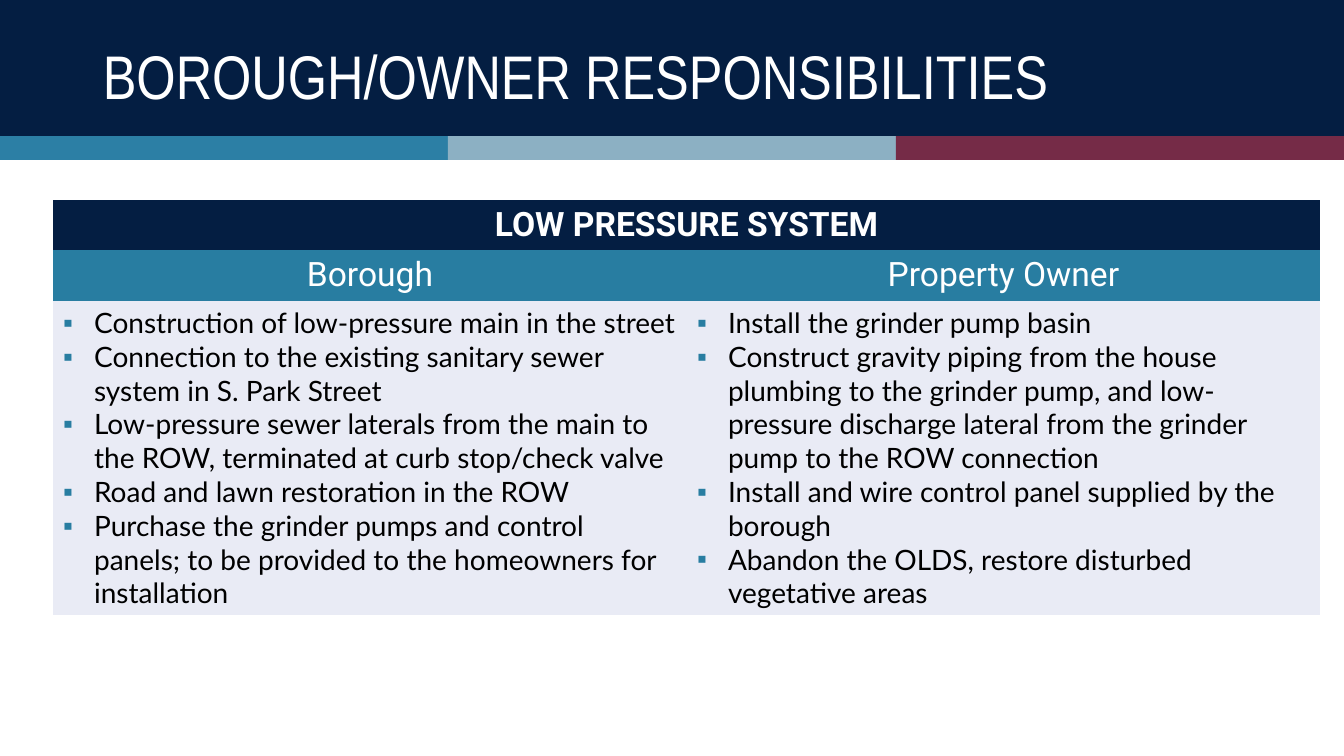
import pptx
import pptx.dml.color
import pptx.enum.shapes
import pptx.enum.text
import pptx.oxml
import pptx.oxml.ns
import pptx.util

NAVY, TEAL, WHITE = "041E42", "287DA1", "FFFFFF"
PANEL, BLACK = "E9EBF5", "000000"
PLAIN_TABLE = "{2D5ABB26-0587-4C30-8999-92F81FD0307C}"
CENTER = pptx.enum.text.PP_ALIGN.CENTER
MIDDLE = pptx.enum.text.MSO_ANCHOR.MIDDLE


def px(length):
    return pptx.util.Emu(round(length * 914400 / 100.8))


def color(hex_value):
    return pptx.dml.color.RGBColor.from_string(hex_value)


class Deck:
    def __init__(self, width, height):
        self.presentation = pptx.Presentation()
        self.presentation.slide_width = px(width)
        self.presentation.slide_height = px(height)
        self.slide = self.presentation.slides.add_slide(self.presentation.slide_layouts[6])

    def band(self, left, top, width, height, fill):
        band = self.slide.shapes.add_shape(
            pptx.enum.shapes.MSO_SHAPE.RECTANGLE, px(left), px(top), px(width), px(height))
        band.shadow.inherit = False
        band.fill.solid()
        band.fill.fore_color.rgb = color(fill)
        band.line.fill.background()

    def style(self, paragraph, font, size, ink, bold=False):
        paragraph.font.name = font
        paragraph.font.size = pptx.util.Pt(size)
        paragraph.font.bold = bold
        paragraph.font.color.rgb = color(ink)

    def title(self, left, top, width, height, text):
        frame = self.slide.shapes.add_textbox(px(left), px(top), px(width), px(height)).text_frame
        frame.word_wrap = True
        frame.vertical_anchor = MIDDLE
        heading = frame.paragraphs[0]
        heading.text = text
        heading.line_spacing = 0.9
        self.style(heading, "Arial Narrow", 44, WHITE)

    def table(self, left, top, columns, rows):
        table = self.slide.shapes.add_table(
            len(rows), len(columns), px(left), px(top), px(sum(columns)), px(sum(rows))).table
        properties = table._tbl.tblPr
        properties.find(pptx.oxml.ns.qn("a:tableStyleId")).text = PLAIN_TABLE
        table.first_row = table.horz_banding = False
        for column, width in zip(table.columns, columns):
            column.width = px(width)
        for row, height in zip(table.rows, rows):
            row.height = px(height)
        return table

    def fill_cell(self, cell, fill):
        cell.fill.solid()
        cell.fill.fore_color.rgb = color(fill)

    def header(self, cell, text, fill, bold=False):
        self.fill_cell(cell, fill)
        label = cell.text_frame.paragraphs[0]
        label.text = text
        label.alignment = CENTER
        self.style(label, "Roboto", 24, WHITE, bold)

    def bullets(self, cell, duties):
        self.fill_cell(cell, PANEL)
        cell.text_frame.text = "\n".join(duties)
        for duty in cell.text_frame.paragraphs:
            properties = duty._p.get_or_add_pPr()
            properties.set("marL", str(px(31)))
            properties.set("indent", str(-px(31)))
            namespace = pptx.oxml.ns.nsdecls("a")
            for bullet in (f'<a:buClr {namespace}><a:srgbClr val="{TEAL}"/></a:buClr>',
                           f'<a:buFont {namespace} typeface="Arial"/>',
                           f'<a:buChar {namespace} char="▪"/>'):
                properties.append(pptx.oxml.parse_xml(bullet))
            self.style(duty, "Lato", 20, BLACK)


RESPONSIBILITIES = {
    "Borough": [
        "Construction of low-pressure main in the street",
        "Connection to the existing sanitary sewer system in S. Park Street",
        "Low-pressure sewer laterals from the main to the ROW, "
        "terminated at curb stop/check valve",
        "Road and lawn restoration in the ROW",
        "Purchase the grinder pumps and control panels; "
        "to be provided to the homeowners for installation",
    ],
    "Property Owner": [
        "Install the grinder pump basin",
        "Construct gravity piping from the house plumbing to the grinder pump, and "
        "low-pressure discharge lateral from the grinder pump to the ROW connection",
        "Install and wire control panel supplied by the borough",
        "Abandon the OLDS, restore disturbed vegetative areas",
    ],
}


def main():
    deck = Deck(1344, 756)

    # Title banner with its three-colour stripe
    deck.band(0, 0, 1344, 136, NAVY)
    for position, stripe in enumerate(("2C7FA5", "8CB0C3", "752B47")):
        deck.band(position * 448, 136, 448, 24, stripe)
    deck.title(93, 25, 1200, 110, "BOROUGH/OWNER RESPONSIBILITIES")

    # Responsibilities table
    duties_table = deck.table(53, 200, [634, 633], [50, 50, 314])
    system = duties_table.cell(0, 0)
    system.merge(duties_table.cell(0, 1))
    deck.header(system, "LOW PRESSURE SYSTEM", NAVY, bold=True)
    for column, (party, duties) in enumerate(RESPONSIBILITIES.items()):
        deck.header(duties_table.cell(1, column), party, TEAL)
        deck.bullets(duties_table.cell(2, column), duties)

    deck.presentation.save("out.pptx")


if __name__ == "__main__":
    main()
